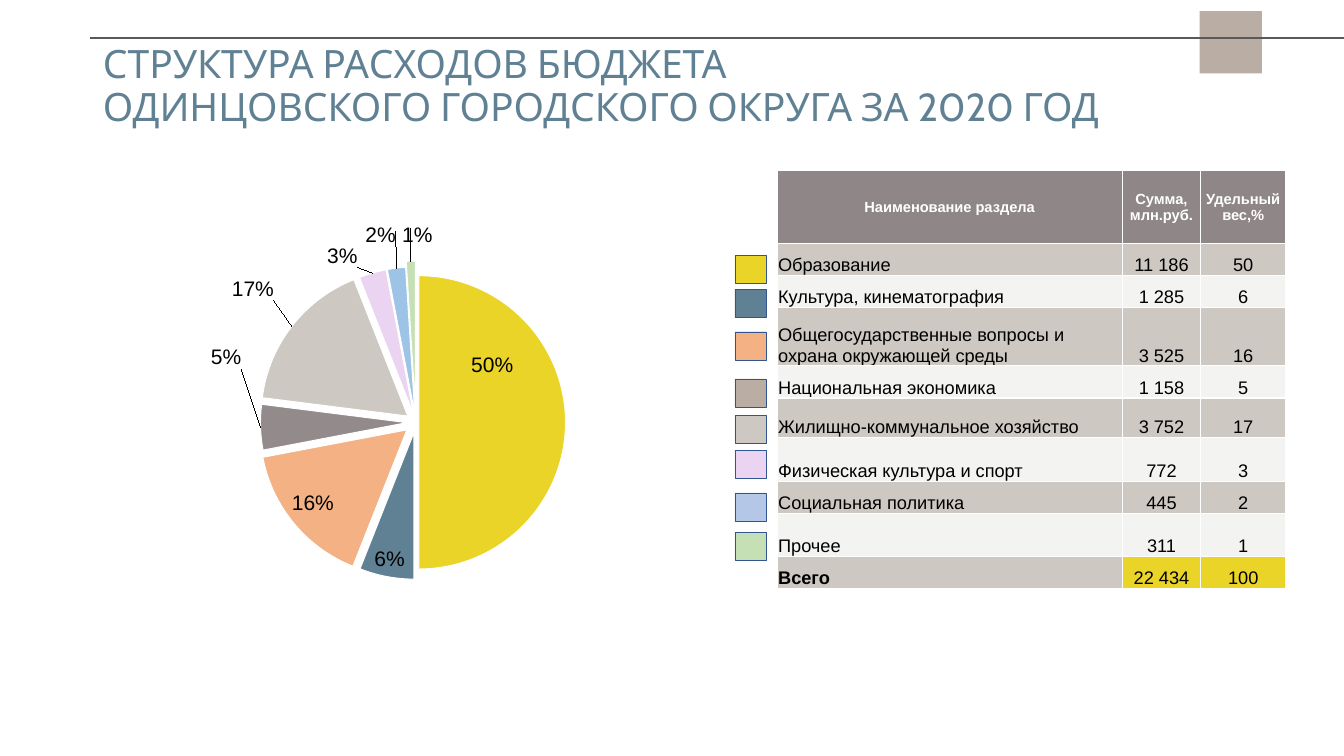
from lxml import etree
from pptx import Presentation
from pptx.chart.data import CategoryChartData
from pptx.dml.color import RGBColor
from pptx.enum.chart import XL_CHART_TYPE, XL_LABEL_POSITION
from pptx.enum.shapes import MSO_CONNECTOR, MSO_SHAPE
from pptx.enum.text import MSO_ANCHOR, MSO_AUTO_SIZE, PP_ALIGN
from pptx.oxml import parse_xml
from pptx.oxml.ns import nsdecls, qn
from pptx.util import Cm, Pt

PIE, RECT, STRAIGHT = XL_CHART_TYPE.PIE, MSO_SHAPE.RECTANGLE, MSO_CONNECTOR.STRAIGHT
LEFT, CENTER = PP_ALIGN.LEFT, PP_ALIGN.CENTER
MIDDLE, BOTTOM = MSO_ANCHOR.MIDDLE, MSO_ANCHOR.BOTTOM
INSIDE, MID, OUTSIDE = (XL_LABEL_POSITION.INSIDE_END, XL_LABEL_POSITION.CENTER,
                        XL_LABEL_POSITION.OUTSIDE_END)

WHITE = RGBColor(0xFF, 0xFF, 0xFF)
BLACK = RGBColor(0x00, 0x00, 0x00)
GRAY = RGBColor(0x59, 0x59, 0x59)
HEADER = RGBColor(0x8F, 0x86, 0x87)
STONE = RGBColor(0xCD, 0xC8, 0xC2)
PALE = RGBColor(0xF3, 0xF3, 0xF1)
TAUPE = RGBColor(0xBA, 0xAD, 0xA4)
MAUVE = RGBColor(0x93, 0x8A, 0x8B)
YELLOW = RGBColor(0xEA, 0xD4, 0x28)
TEAL = RGBColor(0x60, 0x81, 0x94)
ORANGE = RGBColor(0xF4, 0xB1, 0x83)
LILAC = RGBColor(0xEA, 0xD4, 0xF1)
SKY = RGBColor(0x9D, 0xC3, 0xE6)
PERIWINKLE = RGBColor(0xB4, 0xC7, 0xE7)
GREEN = RGBColor(0xC5, 0xE0, 0xB4)
OUTLINE = RGBColor(0x32, 0x54, 0x91)

HEADINGS = ("Наименование раздела", "Сумма, млн.руб.", "Удельный вес,%")
# name, sum, share, row height
SECTIONS = [
    ("Образование", "11 186", 50, 0.8),
    ("Культура, кинематография", "1 285", 6, 0.81),
    ("Общегосударственные вопросы и охрана окружающей среды", "3 525", 16, 1.47),
    ("Национальная экономика", "1 158", 5, 0.81),
    ("Жилищно-коммунальное хозяйство", "3 752", 17, 0.99),
    ("Физическая культура и спорт", "772", 3, 1.12),
    ("Социальная политика", "445", 2, 0.79),
    ("Прочее", "311", 1, 1.09),
]
TOTAL = ("Всего", "22 434", 100, 0.81)
# colour, explosion, label position, label shift as a share of the chart
SLICES = [
    (YELLOW, 2, MID, 0, -0.13),
    (TEAL, 7, INSIDE, -0.02, 0),
    (ORANGE, 8, INSIDE, -0.01, -0.01),
    (MAUVE, 6, OUTSIDE, -0.02, -0.16),
    (STONE, 7, OUTSIDE, -0.02, -0.05),
    (LILAC, 6, OUTSIDE, -0.02, 0),
    (SKY, 6, OUTSIDE, 0, -0.07),
    (GREEN, 10, OUTSIDE, 0.01, -0.06),
]
SERIES_NAMES = ("Series 1", "Series 2")
SERIES_EXPLOSION = 33
SWATCHES = [(YELLOW, 6.43), (TEAL, 7.29), (ORANGE, 8.36), (TAUPE, 9.55),
            (STONE, 10.46), (LILAC, 11.35), (PERIWINKLE, 12.42), (GREEN, 13.41)]


def chart_xml(tag, content="", attributes=""):
    return parse_xml(f'<c:{tag} {nsdecls("c")} {attributes}>{content}</c:{tag}>')


def manual_layout(**values):
    """Return a c:layout element with the given children in order."""
    items = "".join(f'<c:{k} val="{v}"/>' for k, v in values.items())
    return chart_xml("layout", f"<c:manualLayout>{items}</c:manualLayout>")


def explosion_xml(percent):
    return chart_xml("explosion", attributes=f'val="{percent}"')


class SlideBuilder:
    def __init__(self, prs):
        self.slide = prs.slides.add_slide(prs.slide_layouts[5])
        self.shapes = self.slide.shapes
        self.title_font = dict(name="Cabin", size=Pt(27.9), bold=False)
        self.head_font = dict(name="Arial", size=Pt(10.5), bold=True)
        self.body_font = dict(name="Arial", size=Pt(13), bold=False)
        self.label_font = dict(name="Arial", size=Pt(15), bold=False)

    def format(self, font, style, color):
        for name, value in style.items():
            setattr(font, name, value)
        font.color.rgb = color

    def title(self, text, x, y, w, h):
        sp = self.shapes.title
        sp.left, sp.top, sp.width, sp.height = Cm(x), Cm(y), Cm(w), Cm(h)
        tf = sp.text_frame
        tf.text = text
        tf.auto_size, tf.vertical_anchor = MSO_AUTO_SIZE.NONE, MIDDLE
        p = tf.paragraphs[0]
        p.alignment, p.line_spacing = LEFT, 0.9
        for r in p.runs:
            self.format(r.font, self.title_font, TEAL)

    def rect(self, x, y, w, h, color, outline=None):
        sp = self.shapes.add_shape(RECT, Cm(x), Cm(y), Cm(w), Cm(h))
        sp.shadow.inherit = False
        sp.fill.solid()
        sp.fill.fore_color.rgb = color
        if outline:
            sp.line.color.rgb = outline
            sp.line.width = Pt(0.25)
        else:
            sp.line.fill.background()

    def line(self, x1, y1, x2, y2, color, width):
        cxn = self.shapes.add_connector(STRAIGHT, Cm(x1), Cm(y1), Cm(x2), Cm(y2))
        cxn.line.color.rgb = color
        cxn.line.width = Pt(width)
        etree.SubElement(cxn.element.spPr, qn("a:effectLst"))

    def cell(self, cell, text, fill, style, color, align, anchor):
        tc_pr = cell._tc.get_or_add_tcPr()
        for side in ("lnL", "lnR", "lnT", "lnB"):
            tc_pr.append(parse_xml(
                f'<a:{side} {nsdecls("a")} w="12700"><a:solidFill>'
                f'<a:srgbClr val="{WHITE}"/></a:solidFill></a:{side}>'))
        cell.fill.solid()
        cell.fill.fore_color.rgb = fill
        cell.margin_left = cell.margin_right = cell.margin_top = Cm(0.03)
        cell.margin_bottom = 0
        cell.vertical_anchor = anchor
        cell.text = text
        p = cell.text_frame.paragraphs[0]
        p.alignment = align
        self.format(p.runs[0].font, style, color)

    def table(self, x, y, widths, head_height, rows):
        heights = [head_height] + [row[-1] for row in rows]
        table = self.shapes.add_table(len(heights), len(widths), Cm(x), Cm(y),
                                      Cm(sum(widths)), Cm(sum(heights))).table
        for column, width in zip(table.columns, widths):
            column.width = Cm(width)
        for row, height in zip(table.rows, heights):
            row.height = Cm(height)
        for j, text in enumerate(HEADINGS):
            self.cell(table.cell(0, j), text, HEADER, self.head_font, WHITE, CENTER, MIDDLE)
        for i, row in enumerate(rows, 1):
            is_total = row is TOTAL
            for j, value in enumerate(row[:3]):
                fill = YELLOW if is_total and j else STONE if i % 2 else PALE
                style = dict(self.body_font, bold=is_total and j == 0)
                self.cell(table.cell(i, j), str(value), fill, style, BLACK,
                          CENTER if j else LEFT, BOTTOM)

    def slices(self, series):
        """Colour, pull out and label each slice of a series."""
        for i, (color, _, position, _, _) in enumerate(SLICES):
            point = series.points[i]
            point.format.fill.solid()
            point.format.fill.fore_color.rgb = color
            point.format.line.color.rgb = WHITE
            point.format.line.width = Pt(0.75)
            label = point.data_label
            self.format(label.font, self.label_font, BLACK)
            label.position = position
        ser = series._element
        ser.find(qn("c:dPt")).addprevious(explosion_xml(SERIES_EXPLOSION))
        for d_pt, (_, explosion, *_) in zip(ser.iter(qn("c:dPt")), SLICES):
            d_pt.find(qn("c:spPr")).addprevious(explosion_xml(explosion))
        for d_lbl, (*_, dx, dy) in zip(ser.iter(qn("c:dLbl")), SLICES):
            idx = d_lbl.find(qn("c:idx"))
            idx.addnext(chart_xml("numFmt", attributes='formatCode="0&quot;%&quot;"'
                                                       ' sourceLinked="0"'))
            if dx or dy:
                idx.addnext(manual_layout(x=dx, y=dy))

    def pie(self, x, y, w, h, shares):
        data = CategoryChartData(number_format="0")
        data.categories = [str(n) for n in range(1, len(shares) + 1)]
        for name in SERIES_NAMES:
            data.add_series(name, shares)
        chart = self.shapes.add_chart(PIE, Cm(x), Cm(y), Cm(w), Cm(h), data).chart
        chart.has_title = chart.has_legend = False
        self.format(chart.font, dict(name="Calibri", size=Pt(10)), BLACK)
        plot = chart.plots[0]
        plot.vary_by_categories = True
        # python-pptx writes one series for a pie, so the rest is cloned by replace_data
        chart.replace_data(data)
        for series in plot.series:
            self.slices(series)
        area = next(chart._chartSpace.iter(qn("c:plotArea")))
        for old in area.findall(qn("c:layout")):
            area.remove(old)
        area.insert(0, manual_layout(layoutTarget="inner", xMode="edge", yMode="edge",
                                     x=0.084, y=0.008, w=0.916, h=0.894))


def main():
    prs = Presentation()
    prs.slide_width, prs.slide_height = Cm(33.87), Cm(19.05)
    s = SlideBuilder(prs)
    s.title("СТРУКТУРА РАСХОДОВ БЮДЖЕТА\vОДИНЦОВСКОГО ГОРОДСКОГО ОКРУГА ЗА 2020 ГОД",
            2.34, 1.02, 29.21, 2.36)
    s.table(19.58, 4.29, (8.71, 1.96, 2.16), 1.85, SECTIONS + [TOTAL])
    for color, top in SWATCHES:
        s.rect(18.52, top, 0.79, 0.71, color, OUTLINE)
    s.pie(1.4, 5.64, 16.76, 11, [share for _, _, share, _ in SECTIONS])
    s.rect(30.23, 0.28, 1.57, 1.57, TAUPE)
    s.line(2.26, 0.96, 33.87, 0.96, GRAY, 1.5)
    prs.save("out.pptx")


if __name__ == "__main__":
    main()
